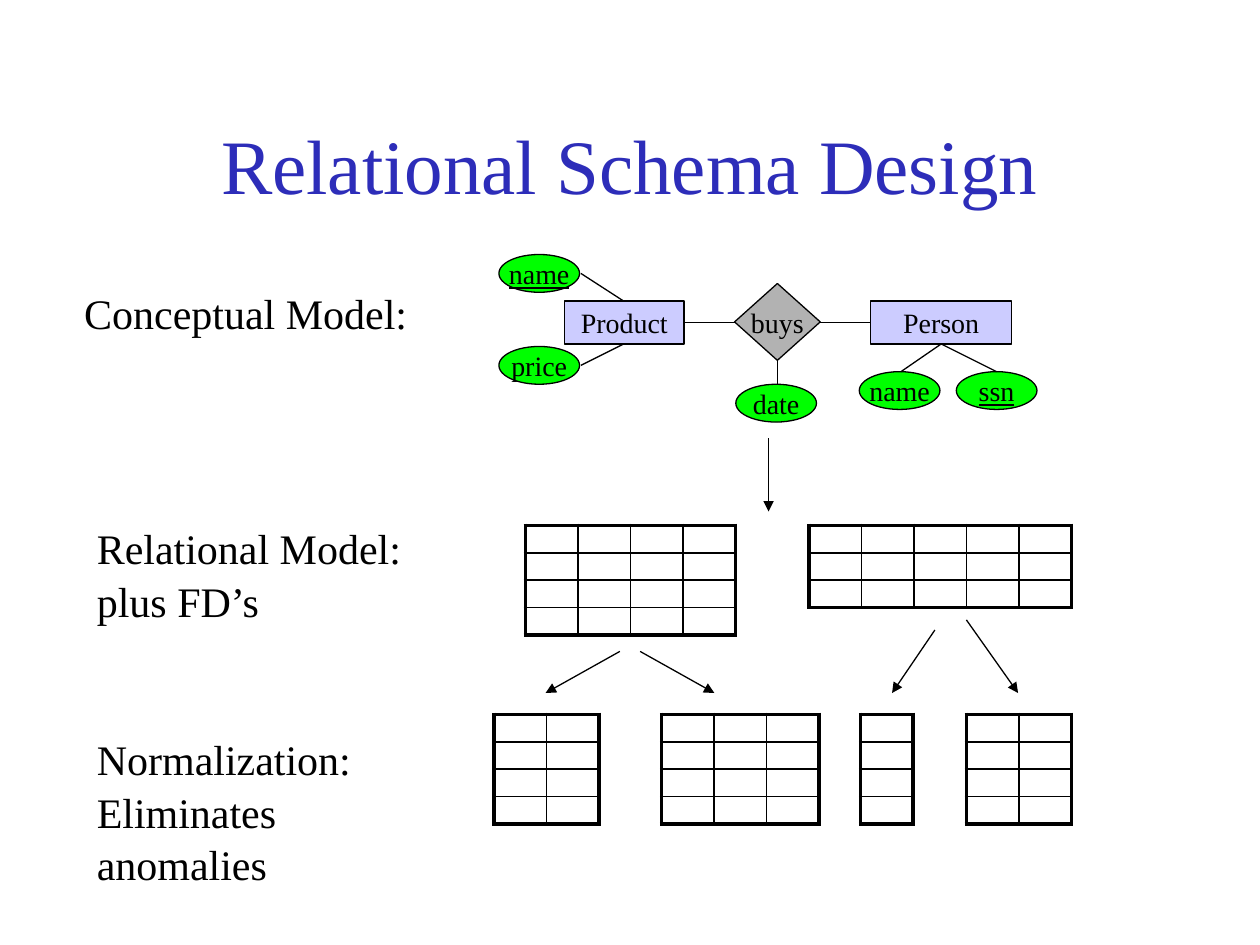
from lxml import etree
from pptx import Presentation
from pptx.dml.color import RGBColor
from pptx.enum import shapes, text
from pptx.oxml.ns import qn
from pptx.util import Inches, Pt

FONT = "Times New Roman"
BLACK, BLUE = "000000", "2D2DB9"
LILAC, GREY, GREEN = "CCCCFF", "B2B2B2", "00FF00"
COL_W = Inches(5) // 12
ROW_H = Inches(0.87) // 4
THIN, MEDIUM, THICK = 1, 1.5, 2.25


def rgb(color):
    return RGBColor.from_string(color)


def add_run(p, words, size, color=BLACK, underline=False):
    r = p.add_run()
    r.text = words
    r.font.name, r.font.size = FONT, Pt(size)
    r.font.color.rgb = rgb(color)
    if underline:
        r.font.underline = True


def add_text(s, box, lines, size, color=BLACK, align=text.PP_ALIGN.LEFT,
             anchor=text.MSO_ANCHOR.TOP, spacing=None):
    tf = s.shapes.add_textbox(*map(Inches, box)).text_frame
    tf.word_wrap, tf.vertical_anchor = True, anchor
    for i, words in enumerate(lines):
        p = tf.add_paragraph() if i else tf.paragraphs[0]
        p.alignment = align
        p.line_spacing = spacing
        add_run(p, words, size, color)


def add_node(s, kind, box, words, fill, underline=False):
    sp = s.shapes.add_shape(kind, *map(Inches, box))
    sp.shadow.inherit = False
    sp.fill.solid()
    sp.fill.fore_color.rgb = rgb(fill)
    sp.line.color.rgb = rgb(BLACK)
    sp.line.width = Pt(0.75)
    tf = sp.text_frame
    tf.word_wrap, tf.vertical_anchor = False, text.MSO_ANCHOR.MIDDLE
    p = tf.paragraphs[0]
    p.alignment = text.PP_ALIGN.CENTER
    add_run(p, words, 16, underline=underline)


def add_attribute(s, left, top, words, key=False):
    add_node(s, shapes.MSO_SHAPE.OVAL, (left, top, 0.64, 0.3), words, GREEN, key)


def add_line(s, ends, arrow=False):
    line = s.shapes.add_connector(shapes.MSO_CONNECTOR.STRAIGHT, *map(Inches, ends))
    line.line.color.rgb = rgb(BLACK)
    line.line.width = Pt(0.75)
    if arrow:
        ln = line.line._get_or_add_ln()
        etree.SubElement(ln, qn("a:tailEnd"), type="triangle")
    etree.SubElement(line._element.spPr, qn("a:effectLst"))


def set_border(cell, side, width):
    ln = etree.SubElement(cell._tc.get_or_add_tcPr(), qn("a:" + side), w=str(Pt(width)))
    fill = etree.SubElement(ln, qn("a:solidFill"))
    etree.SubElement(fill, qn("a:srgbClr"), val=BLACK)


def add_grid(s, left, top, rows, cols):
    frame = s.shapes.add_table(rows, cols, Inches(left), Inches(top),
                               COL_W * cols, ROW_H * rows)
    table = frame.table
    table.first_row = table.horz_banding = False
    for col in table.columns:
        col.width = COL_W
    # Thick frame, medium rule below the header, thin rules inside
    across = [THICK, MEDIUM] + [THIN] * (rows - 2) + [THICK]
    down = [THICK] + [THIN] * (cols - 1) + [THICK]
    for i, row in enumerate(table.rows):
        row.height = ROW_H
        for j, cell in enumerate(row.cells):
            cell.margin_top = cell.margin_bottom = 0
            # Small text size lets the empty rows stay low
            etree.SubElement(cell.text_frame.paragraphs[0]._p,
                             qn("a:endParaRPr"), sz="800")
            for side, width in (("lnL", down[j]), ("lnR", down[j + 1]),
                                ("lnT", across[i]), ("lnB", across[i + 1])):
                set_border(cell, side, width)
            cell.fill.background()


def main():
    prs = Presentation()
    prs.slide_width, prs.slide_height = Inches(10), Inches(7.5)
    s = prs.slides.add_slide(prs.slide_layouts[6])

    # Title and stage labels
    add_text(s, (0.75, 0.67, 8.5, 1.25), ["Relational Schema Design"], 44, BLUE,
             text.PP_ALIGN.CENTER, text.MSO_ANCHOR.MIDDLE)
    for box, lines in (
        ((0.57, 2.21, 2.9, 0.5), ["Conceptual Model:"]),
        ((0.67, 4.08, 2.9, 0.9), ["Relational Model:", "plus FD’s"]),
        ((0.67, 5.75, 2.9, 1.3), ["Normalization:", "Eliminates anomalies"]),
    ):
        add_text(s, box, lines, 24, spacing=1.05)

    # Relational tables, then normalized tables
    for left, rows, cols in ((4.17, 4, 4), (6.42, 3, 5)):
        add_grid(s, left, 4.17, rows, cols)
    for left, cols in ((3.92, 2), (5.25, 3), (6.83, 1), (7.67, 2)):
        add_grid(s, left, 5.67, 4, cols)

    # Arrows between stages
    for ends in ((6.1, 3.48, 6.1, 4.06),
                 (4.92, 5.17, 4.33, 5.5), (5.08, 5.17, 5.67, 5.5),
                 (7.42, 5, 7.08, 5.5), (7.67, 4.92, 8.08, 5.5)):
        add_line(s, ends, arrow=True)

    # Entities and relationship
    shape = shapes.MSO_SHAPE
    add_node(s, shape.RECTANGLE, (6.91, 2.39, 1.12, 0.34), "Person", LILAC)
    add_node(s, shape.DIAMOND, (5.83, 2.25, 0.68, 0.61), "buys", GREY)
    add_node(s, shape.RECTANGLE, (4.48, 2.39, 0.95, 0.34), "Product", LILAC)

    # Attributes, keys underlined
    add_attribute(s, 3.96, 2.02, "name", key=True)
    add_attribute(s, 3.96, 2.75, "price")
    add_attribute(s, 6.82, 2.95, "name")
    add_attribute(s, 7.59, 2.95, "ssn", key=True)
    add_attribute(s, 5.84, 3.05, "date")

    # Diagram links
    for ends in ((4.95, 2.39, 4.61, 2.17), (4.95, 2.73, 4.61, 2.9),
                 (5.83, 2.56, 5.42, 2.56), (6.91, 2.56, 6.5, 2.56),
                 (6.17, 3.05, 6.17, 2.86),
                 (7.47, 2.73, 7.15, 2.95), (7.47, 2.73, 7.91, 2.95)):
        add_line(s, ends)

    prs.save("out.pptx")


if __name__ == "__main__":
    main()
